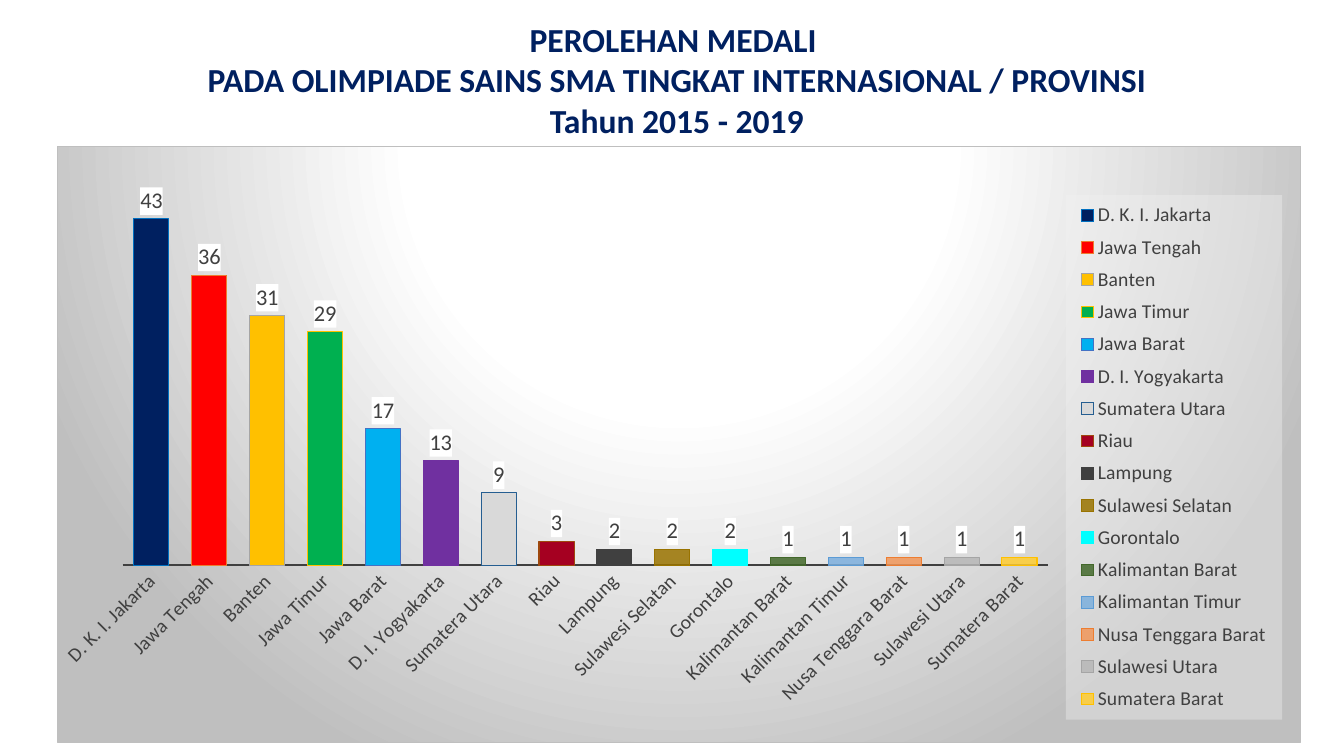
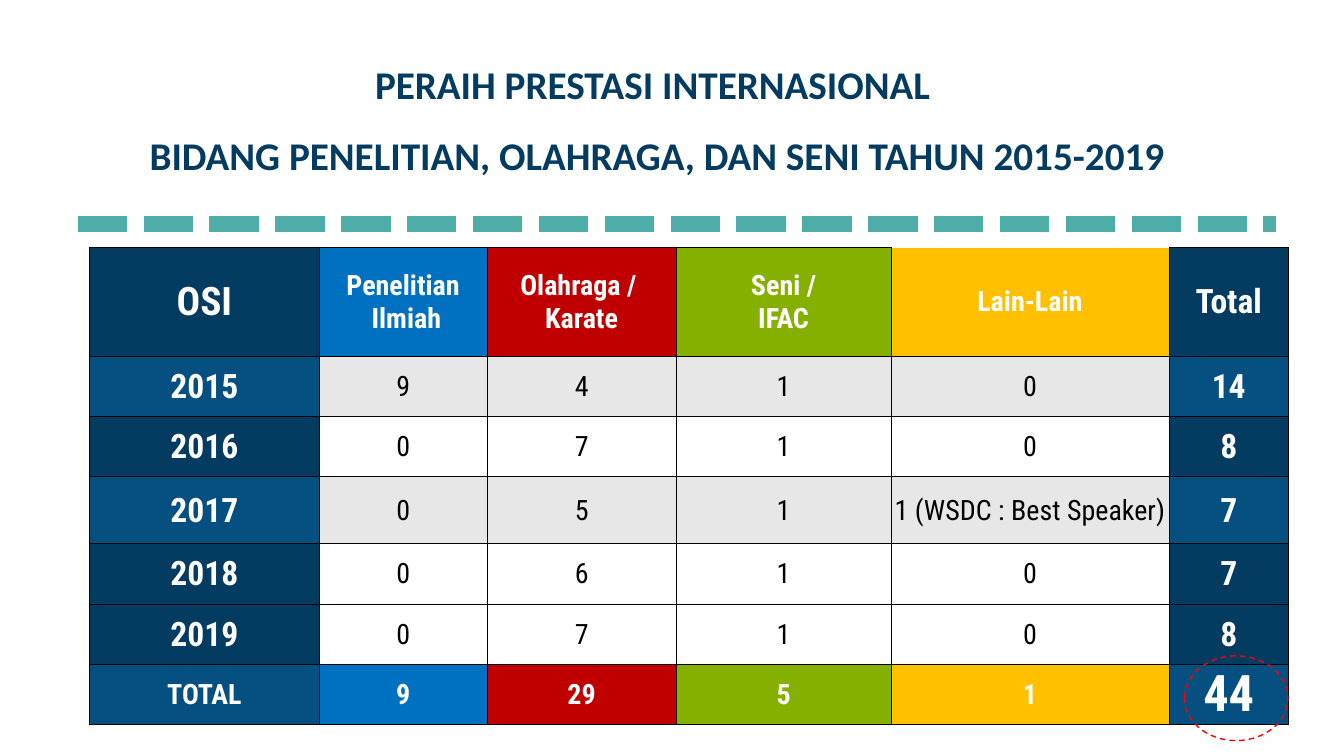
from pptx import Presentation
from pptx.chart.data import CategoryChartData
from pptx.dml.color import RGBColor
from pptx.enum.chart import XL_CHART_TYPE as ChartType, XL_LABEL_POSITION as LabelPosition
from pptx.enum.chart import XL_LEGEND_POSITION as LegendPosition, XL_TICK_MARK as TickMark
from pptx.enum.dml import MSO_LINE as Dash
from pptx.enum.shapes import MSO_CONNECTOR as Connector, MSO_SHAPE as Shape
from pptx.enum.text import MSO_ANCHOR as Anchor, MSO_AUTO_SIZE as AutoSize, PP_ALIGN as Align
from pptx.oxml import parse_xml
from pptx.oxml.ns import nsdecls, qn
from pptx.util import Pt

COLORS = {
    "title": "002060", "navy": "043C61", "blue": "065081", "teal": "4EADA7",
    "research": "0070C0", "sport": "C00000", "art": "86B000", "other": "FFC000",
    "band": "E7E7E7", "white": "FFFFFF", "black": "000000", "red": "FF0000",
    "text": "404040", "edge": "BFBFBF", "legend": "F2F2F2",
}
BODY_FONT, TABLE_FONT = "Calibri", "Roboto Condensed"


def rgb(name):
    return RGBColor.from_string(COLORS[name])


def write_lines(frame, lines, font_name, size, color, bold=True, spacing=1.0):
    """Write one centred paragraph per line."""
    for index, line in enumerate(lines):
        paragraph = frame.add_paragraph() if index else frame.paragraphs[0]
        paragraph.alignment = Align.CENTER
        paragraph.line_spacing = spacing
        run = paragraph.add_run()
        run.text = line
        run.font.name, run.font.size, run.font.bold = font_name, Pt(size), bold
        run.font.color.rgb = rgb(color)


presentation = Presentation()
presentation.slide_width, presentation.slide_height = Pt(960), Pt(540)

# Titled slides: lines, size, colour, line spacing, box
titles = [
    (["PEROLEHAN MEDALI ",
      "PADA OLIMPIADE SAINS SMA TINGKAT INTERNASIONAL / PROVINSI",
      "Tahun 2015 - 2019"], 24, "title", 1.0, (140.5, 10, 686, 94.5)),
    (["PERAIH PRESTASI INTERNASIONAL ",
      "BIDANG PENELITIAN, OLAHRAGA, DAN SENI TAHUN 2015-2019"],
     28, "navy", 1.5, (45.5, 23, 847.5, 104)),
]
for lines, size, color, spacing, box in titles:
    slide = presentation.slides.add_slide(presentation.slide_layouts[5])
    title = slide.shapes.title
    title.left, title.top, title.width, title.height = map(Pt, box)
    frame = title.text_frame
    frame.auto_size, frame.word_wrap = AutoSize.NONE, True
    frame.vertical_anchor = Anchor.TOP
    write_lines(frame, lines, BODY_FONT, size, color, spacing=spacing)
medal_slide, achievement_slide = presentation.slides

# Medals by province: name, medals, fill, outline, opacity in percent
provinces = [
    ("D. K. I. Jakarta", 43, "002060", "0070C0", 100),
    ("Jawa Tengah", 36, "FF0000", "ED7D31", 100),
    ("Banten", 31, "FFC000", "A5A5A5", 100),
    ("Jawa Timur", 29, "00B050", "FFC000", 100),
    ("Jawa Barat", 17, "00B0F0", "4472C4", 100),
    ("D. I. Yogyakarta", 13, "7030A0", "7030A0", 100),
    ("Sumatera Utara", 9, "D9D9D9", "255E91", 100),
    ("Riau", 3, "A50021", "9E480E", 100),
    ("Lampung", 2, "404040", "404040", 100),
    ("Sulawesi Selatan", 2, "997300", "997300", 85),
    ("Gorontalo", 2, "00FFFF", "00FFFF", 100),
    ("Kalimantan Barat", 1, "43682B", "43682B", 85),
    ("Kalimantan Timur", 1, "7CAFDD", "5B9BD5", 85),
    ("Nusa Tenggara Barat", 1, "F1975A", "ED7D31", 85),
    ("Sulawesi Utara", 1, "B7B7B7", "A5A5A5", 85),
    ("Sumatera Barat", 1, "FFCD33", "FFC000", 85),
]
chart_data = CategoryChartData()
chart_data.categories = [province[0] for province in provinces]
chart_data.add_series("Series 1", [province[1] for province in provinces])
chart = medal_slide.shapes.add_chart(
    ChartType.COLUMN_CLUSTERED, Pt(41), Pt(104.5), Pt(888.5), Pt(426), chart_data).chart
chart.has_title = False
chart.has_legend = True
chart.legend.position = LegendPosition.RIGHT
chart.legend.include_in_layout = False

plot = chart.plots[0]
plot.gap_width = 65
plot.vary_by_categories = True
plot.has_data_labels = True
labels = plot.data_labels
labels.show_value = True
labels.position = LabelPosition.OUTSIDE_END

category_axis, value_axis = chart.category_axis, chart.value_axis
category_axis.major_tick_mark = TickMark.NONE
category_axis.format.line.color.rgb = rgb("text")
category_axis.format.line.width = Pt(1.5)
value_axis.visible = False
value_axis.has_major_gridlines = False
value_axis.minimum_scale, value_axis.maximum_scale = 0, 50

for font, size, color in [
    (chart.font, 16, "black"), (labels.font, 16, "text"),
    (chart.legend.font, 14, "text"), (category_axis.tick_labels.font, 14, "text"),
]:
    font.name, font.size, font.color.rgb = BODY_FONT, Pt(size), rgb(color)

for index, (name, medals, fill, outline, opacity) in enumerate(provinces):
    bar = plot.series[0].points[index].format
    bar.fill.solid()
    bar.fill.fore_color.rgb = RGBColor.from_string(fill)
    bar.line.color.rgb = RGBColor.from_string(outline)
    bar.line.width = Pt(0.75)
    if opacity < 100:
        point = chart.element.findall(f".//{qn('c:dPt')}")[index]
        point.find(f"{qn('c:spPr')}/{qn('a:solidFill')}/{qn('a:srgbClr')}").append(
            parse_xml(f'<a:alpha {nsdecls("a")} val="{opacity * 1000}"/>'))

plot_area = chart.element.find(f".//{qn('c:plotArea')}")
legend = chart.element.find(f".//{qn('c:legend')}")
label_block = chart.element.find(f".//{qn('c:dLbls')}")
axis_body = chart.element.find(f".//{qn('c:catAx')}/{qn('c:txPr')}/{qn('a:bodyPr')}")
axis_body.set("rot", str(-45 * 60000))
axis_body.set("vert", "horz")

# Fixed places of plot and legend, as fractions of the chart
for part, position, target, fractions in [
    (plot_area, 0, '<c:layoutTarget val="inner"/>', (0.052, 0.026, 0.745, 0.677)),
    (legend, 1, "", (0.811, 0.081, 0.174, 0.881)),
]:
    for old_layout in part.findall(qn("c:layout")):
        part.remove(old_layout)
    edges = "".join(f'<c:{edge} val="{value}"/>' for edge, value in zip("xywh", fractions))
    part.insert(position, parse_xml(
        f'<c:layout {nsdecls("c")}><c:manualLayout>{target}'
        f'<c:xMode val="edge"/><c:yMode val="edge"/>{edges}</c:manualLayout></c:layout>'))

# Backgrounds of chart, legend and labels
stops = "".join(
    f'<a:gs pos="{percent * 1000}"><a:srgbClr val="{COLORS[color]}"/></a:gs>'
    for percent, color in [(0, "white"), (39, "white"), (100, "edge")])
backdrop = (
    f'<a:gradFill><a:gsLst>{stops}</a:gsLst><a:path path="circle">'
    '<a:fillToRect l="50000" t="-80000" r="50000" b="180000"/></a:path></a:gradFill>'
    f'<a:ln w="{Pt(0.75)}"><a:solidFill><a:srgbClr val="{COLORS["edge"]}"/></a:solidFill></a:ln>')
legend_fill = (f'<a:solidFill><a:srgbClr val="{COLORS["legend"]}">'
               '<a:alpha val="39000"/></a:srgbClr></a:solidFill>')
label_fill = f'<a:solidFill><a:srgbClr val="{COLORS["white"]}"/></a:solidFill>'
for part, fill in [(chart.element, backdrop), (legend, legend_fill), (label_block, label_fill)]:
    part.find(qn("c:txPr")).addprevious(
        parse_xml(f'<c:spPr {nsdecls("c", "a")}>{fill}</c:spPr>'))

# Achievements by year
rows = [
    ["OSI", "Penelitian\n Ilmiah", "Olahraga / \nKarate", "Seni /\nIFAC", "Lain-Lain", "Total"],
    ["2015", "9", "4", "1", "0", "14"],
    ["2016", "0", "7", "1", "0", "8"],
    ["2017", "0", "5", "1", "1 (WSDC : Best Speaker)", "7"],
    ["2018", "0", "6", "1", "0", "7"],
    ["2019", "0", "7", "1", "0", "8"],
    ["TOTAL", "9", "29", "5", "1", "44"],
]
column_widths = [164, 120, 135, 153.5, 198.5, 85.5]
row_heights = [78, 43, 43, 48, 43, 43, 43]
field_fills = ["research", "sport", "art", "other"]
side_fills = ["navy", "blue", "navy", "blue", "navy", "navy", "blue"]
special_sizes = {(0, 0): 28, (6, 0): 20, (6, 5): 36}
last_row, last_column = len(rows) - 1, len(column_widths) - 1

table = achievement_slide.shapes.add_table(
    len(rows), len(column_widths), Pt(64), Pt(176.5),
    Pt(sum(column_widths)), Pt(sum(row_heights))).table
table.first_row = table.horz_banding = False
for column, width in zip(table.columns, column_widths):
    column.width = Pt(width)
for row, height in zip(table.rows, row_heights):
    row.height = Pt(height)

for r, values in enumerate(rows):
    for c, value in enumerate(values):
        is_side = c in (0, last_column)
        is_field_band = not is_side and r in (0, last_row)
        if is_side:
            fill, size, color = side_fills[r], special_sizes.get((r, c), 24), "white"
        elif is_field_band:
            fill, size, color = field_fills[c - 1], 20, "white"
        else:
            fill, size, color = "band" if r in (1, 3) else "white", 20, "black"

        cell = table.cell(r, c)
        cell.vertical_anchor = Anchor.MIDDLE
        cell.margin_left = cell.margin_right = cell.margin_top = Pt(0.7)
        cell.margin_bottom = 0
        properties = cell._tc.get_or_add_tcPr()
        for side in "LRTB":
            if (r, c, side) == (0, 4, "T"):
                continue
            properties.append(parse_xml(
                f'<a:ln{side} {nsdecls("a")} w="{Pt(0.5)}"><a:solidFill>'
                f'<a:srgbClr val="{COLORS["black"]}"/></a:solidFill></a:ln{side}>'))
        cell.fill.solid()
        cell.fill.fore_color.rgb = rgb(fill)
        write_lines(cell.text_frame, value.split("\n"), TABLE_FONT, size, color,
                    bold=is_side or is_field_band)

total_ring = achievement_slide.shapes.add_shape(Shape.OVAL, Pt(846), Pt(468.5), Pt(74), Pt(60.5))
total_ring.shadow.inherit = False
total_ring.fill.background()
total_ring.line.color.rgb = rgb("red")
total_ring.line.width = Pt(1)
total_ring.line.dash_style = Dash.DASH

divider = achievement_slide.shapes.add_connector(
    Connector.STRAIGHT, Pt(55.5), Pt(160), Pt(911.5), Pt(160))
divider.line.color.rgb = rgb("teal")
divider.line.width = Pt(11.75)
divider.line.dash_style = Dash.ROUND_DOT
divider.line.dash_style = Dash.SQUARE_DOT
divider._element.spPr.append(parse_xml(f'<a:effectLst {nsdecls("a")}/>'))

presentation.save("out.pptx")
